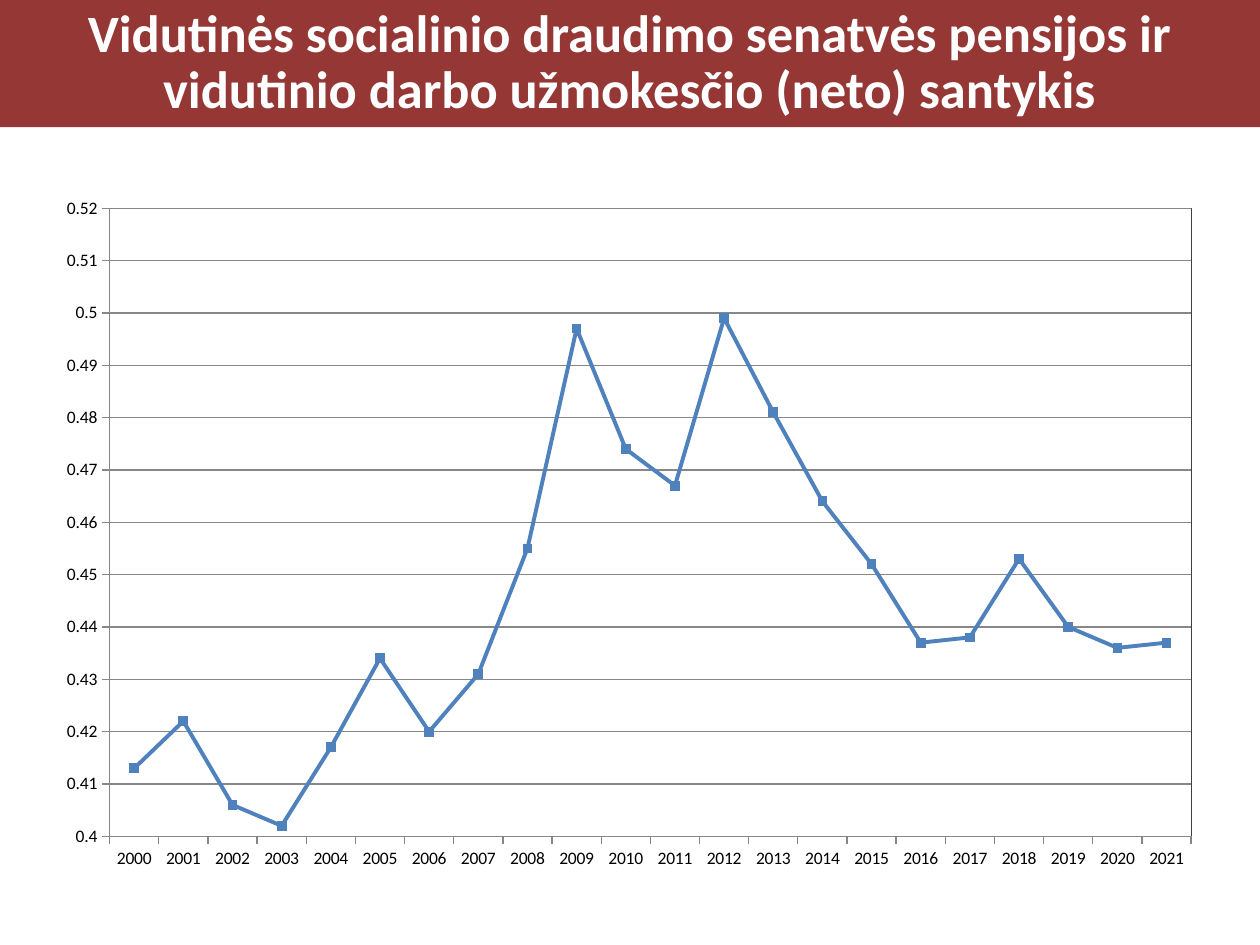
from lxml import etree
from pptx import Presentation
from pptx.chart.data import CategoryChartData
from pptx.dml.color import RGBColor
from pptx.enum.chart import XL_CHART_TYPE as ChartType
from pptx.enum.chart import XL_MARKER_STYLE as Marker
from pptx.enum.chart import XL_TICK_MARK as Tick
from pptx.enum.text import MSO_ANCHOR as Anchor
from pptx.enum.text import PP_ALIGN as Align
from pptx.oxml import parse_xml
from pptx.oxml.ns import nsdecls, qn
from pptx.util import Inches, Pt

COLORS = {"banner": "953735", "title": "FFFFFF", "text": "000000",
          "grid": "878787", "frame": "404040", "line": "4F81BD"}
FONT = "Calibri"
WIDTH, HEIGHT = Inches(10), Inches(7.5)
TITLE = ("Vidutinės socialinio draudimo senatvės pensijos ir "
         "vidutinio darbo užmokesčio (neto) santykis")
YEARS = range(2000, 2022)
RATIOS = [0.413, 0.422, 0.406, 0.402, 0.417, 0.434, 0.42, 0.431, 0.455, 0.497, 0.474,
          0.467, 0.499, 0.481, 0.464, 0.452, 0.437, 0.438, 0.453, 0.44, 0.436, 0.437]


def color(name):
    return RGBColor.from_string(COLORS[name])


def place(shape, box):
    shape.left, shape.top, shape.width, shape.height = box


def add_banner(page, box):
    banner = page.shapes.title
    place(banner, box)
    banner.fill.solid()
    banner.fill.fore_color.rgb = color("banner")
    frame = banner.text_frame
    frame.word_wrap = True
    frame.vertical_anchor = Anchor.MIDDLE
    para = frame.paragraphs[0]
    para.alignment = Align.CENTER
    para.line_spacing = 0.9
    span = para.add_run()
    span.text = TITLE
    span.font.name, span.font.size, span.font.bold = FONT, Pt(30), True
    span.font.color.rgb = color("title")


def frame_plot(chart, shares):
    """Fix the inner plot area to shares of the chart and outline it."""
    plot_area = chart._chartSpace.chart.plotArea
    for old in plot_area.findall(qn("c:layout")):
        plot_area.remove(old)
    layout = parse_xml(f"<c:layout {nsdecls('c')}><c:manualLayout/></c:layout>")
    settings = {"layoutTarget": "inner", "xMode": "edge", "yMode": "edge", **shares}
    for tag, value in settings.items():
        etree.SubElement(layout[0], qn(f"c:{tag}")).set("val", str(value))
    plot_area.insert(0, layout)
    plot_area.append(parse_xml(
        f'<c:spPr {nsdecls("c", "a")}><a:noFill/><a:ln w="9525"><a:solidFill>'
        f'<a:srgbClr val="{COLORS["frame"]}"/></a:solidFill></a:ln></c:spPr>'))


def style_axis(axis):
    axis.major_tick_mark, axis.minor_tick_mark = Tick.OUTSIDE, Tick.NONE
    axis.format.line.color.rgb = color("grid")
    axis.format.line.width = Pt(0.75)


def add_ratio_chart(page, box):
    data = CategoryChartData(number_format="General")
    data.categories = [str(year) for year in YEARS]
    data.add_series("Series 1", RATIOS)
    chart = page.shapes.add_chart(ChartType.LINE_MARKERS, *box, data).chart
    chart.has_title = chart.has_legend = False
    chart.font.name, chart.font.size = FONT, Pt(10)
    chart.font.color.rgb = color("text")

    style_axis(chart.category_axis)
    ratio_axis = chart.value_axis
    style_axis(ratio_axis)
    ratio_axis.minimum_scale, ratio_axis.maximum_scale = 0.4, 0.52
    ratio_axis.major_unit = 0.01
    ratio_axis.has_major_gridlines = True
    grid_line = ratio_axis.major_gridlines.format.line
    grid_line.color.rgb, grid_line.width = color("grid"), Pt(0.75)

    chart.plots[0].vary_by_categories = False
    series = chart.plots[0].series[0]
    series.smooth = False
    series.format.line.color.rgb = color("line")
    series.format.line.width = Pt(2.25)
    series.marker.style, series.marker.size = Marker.SQUARE, 5
    series.marker.format.fill.solid()
    series.marker.format.fill.fore_color.rgb = color("line")
    series.marker.format.line.color.rgb = color("line")
    frame_plot(chart, {"x": 0.056, "y": 0.033, "w": 0.924, "h": 0.9})


def main():
    deck = Presentation()
    deck.slide_width, deck.slide_height = WIDTH, HEIGHT
    page = deck.slides.add_slide(deck.slide_layouts.get_by_name("Title Only"))
    add_banner(page, (0, 0, WIDTH, Inches(1.01)))
    add_ratio_chart(page, (Inches(0.35), Inches(1.47), Inches(9.29), Inches(5.54)))
    deck.save("out.pptx")


if __name__ == "__main__":
    main()
